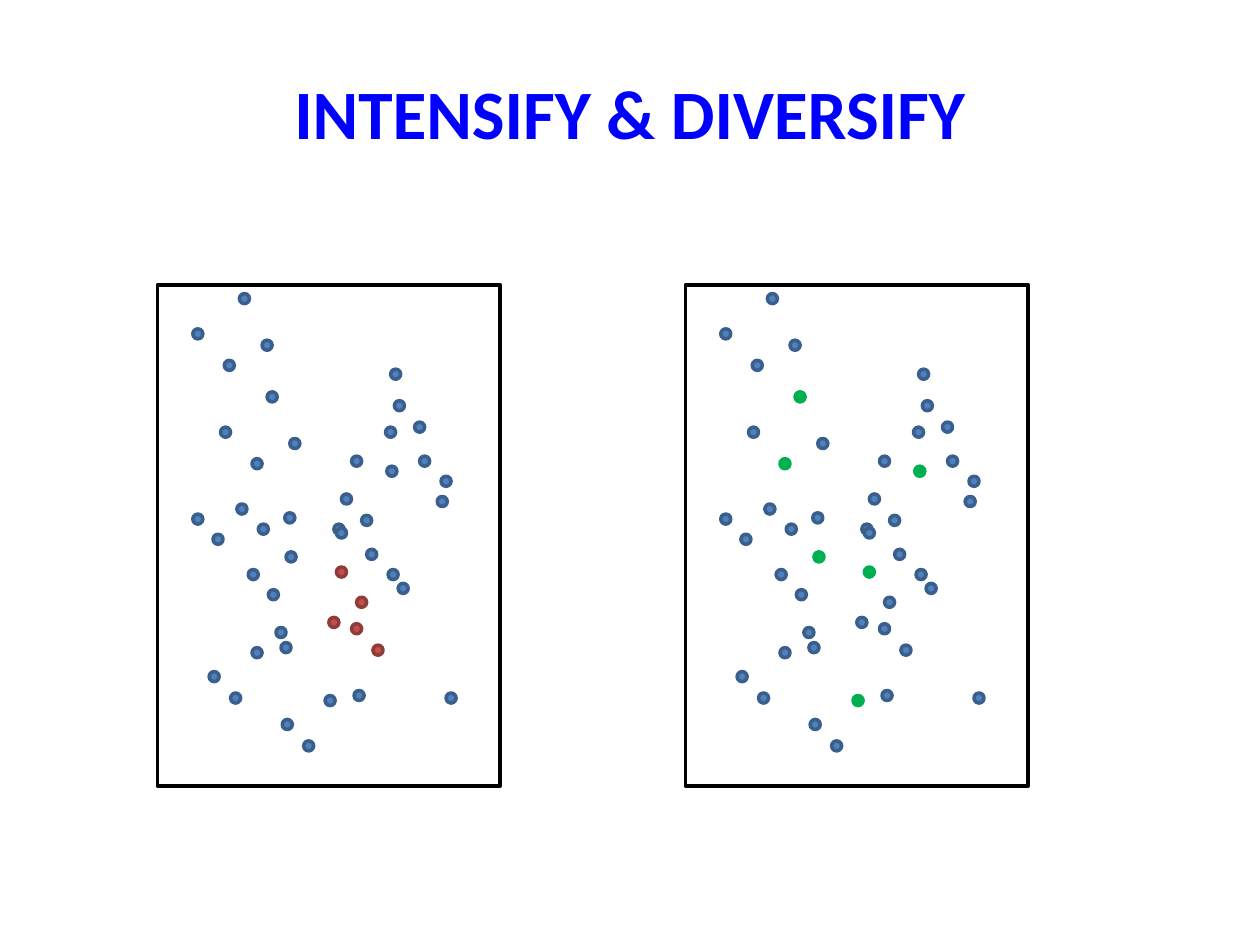
from dataclasses import dataclass

from pptx import Presentation
from pptx.dml.color import RGBColor
from pptx.enum.shapes import MSO_SHAPE
from pptx.enum.text import MSO_ANCHOR, MSO_AUTO_SIZE, PP_ALIGN
from pptx.shapes.group import GroupShape
from pptx.text.text import TextFrame
from pptx.util import Inches, Pt

OVAL, RECT = MSO_SHAPE.OVAL, MSO_SHAPE.RECTANGLE
CENTER, MIDDLE = PP_ALIGN.CENTER, MSO_ANCHOR.MIDDLE
NO_AUTOFIT = MSO_AUTO_SIZE.NONE

Point = tuple[float, float]


@dataclass(frozen=True)
class DotStyle:
    fill: str
    line: str


@dataclass(frozen=True)
class Theme:
    font: str = "Calibri"
    title_size: float = 39.6
    title_color: str = "0000FF"
    frame_color: str = "000000"
    line_width: float = 2
    plain: DotStyle = DotStyle("4F81BD", "3A5F8C")
    intense: DotStyle = DotStyle("C0504D", "8E3B39")
    diverse: DotStyle = DotStyle("00B050", "00B050")


@dataclass(frozen=True)
class Panel:
    left: float
    chosen: frozenset[Point]
    style: DotStyle


THEME = Theme()
PANEL_TOP, PANEL_WIDTH, PANEL_HEIGHT = 2.26, 2.72, 3.98
DOT_SIZE = 0.08

# Top-left corners of the dots, measured from the panel's top-left corner.
DOTS: list[Point] = [
    (0.5, 1.13), (1.05, 1.22), (0.63, 1.74), (0.72, 2.26), (0.28, 1.82),
    (1.46, 1.66), (1.66, 2.1), (1.54, 1.36), (0.94, 2.72), (1.91, 2.37),
    (0.98, 2.84), (1.54, 2.69), (1.01, 1.81), (0.41, 3.07), (0.8, 1.9),
    (0.88, 2.42), (0.44, 1.98), (1.62, 1.83), (1.83, 2.26), (0.75, 2.88),
    (1.36, 2.64), (1.71, 2.86), (0.58, 3.24), (1.88, 0.92), (2.08, 1.36),
    (1.85, 0.67), (2.22, 1.68), (2.04, 1.09), (2.25, 1.52), (1.81, 1.13),
    (0.28, 0.35), (0.83, 0.44), (0.53, 0.6), (0.65, 0.07), (1.56, 3.22),
    (0.99, 3.45), (1.33, 3.26), (2.29, 3.24), (1.16, 3.62), (1.4, 1.9),
    (0.75, 1.38), (0.87, 0.85), (1.02, 2.12), (1.58, 2.48), (1.42, 2.24),
    (1.42, 1.93), (1.82, 1.44),
]
CLUSTERED = frozenset(
    [(1.54, 2.69), (1.36, 2.64), (1.71, 2.86), (1.58, 2.48), (1.42, 2.24)])
SCATTERED = frozenset(
    [(1.33, 3.26), (0.75, 1.38), (0.87, 0.85), (1.02, 2.12), (1.42, 2.24),
     (1.82, 1.44)])
PANELS = [
    Panel(1.25, CLUSTERED, THEME.intense),
    Panel(5.44, SCATTERED, THEME.diverse),
]


def write(tf: TextFrame, text: str, *, size: float, color: str,
          bold: bool = False, align: PP_ALIGN = CENTER) -> None:
    tf.word_wrap = True
    tf.auto_size = NO_AUTOFIT
    tf.vertical_anchor = MIDDLE
    p = tf.paragraphs[0]
    p.alignment = align
    r = p.add_run()
    r.text = text
    r.font.name = THEME.font
    r.font.size = Pt(size)
    r.font.bold = bold
    r.font.color.rgb = RGBColor.from_string(color)


def add_outlined(group: GroupShape, kind: MSO_SHAPE, left: float, top: float,
                 width: float, height: float, line: str,
                 fill: str | None = None) -> None:
    """Add an outlined shape; without a fill colour it stays see-through."""
    sp = group.shapes.add_shape(
        kind, Inches(left), Inches(top), Inches(width), Inches(height))
    sp.shadow.inherit = False
    if fill is None:
        sp.fill.background()
    else:
        sp.fill.solid()
        sp.fill.fore_color.rgb = RGBColor.from_string(fill)
    sp.line.color.rgb = RGBColor.from_string(line)
    sp.line.width = Pt(THEME.line_width)


def draw_panel(group: GroupShape, panel: Panel) -> None:
    add_outlined(group, RECT, panel.left, PANEL_TOP, PANEL_WIDTH, PANEL_HEIGHT,
                 THEME.frame_color)
    for dot in DOTS:
        style = panel.style if dot in panel.chosen else THEME.plain
        add_outlined(group, OVAL, panel.left + dot[0], PANEL_TOP + dot[1],
                     DOT_SIZE, DOT_SIZE, style.line, style.fill)


def main() -> None:
    prs = Presentation()
    prs.slide_width, prs.slide_height = Inches(10), Inches(7.5)
    s = prs.slides.add_slide(prs.slide_layouts[5])

    title = s.shapes.title
    title.left, title.top = Inches(0.5), Inches(0.5)
    title.width, title.height = Inches(9), Inches(0.78)
    write(title.text_frame, "INTENSIFY & DIVERSIFY", size=THEME.title_size,
          color=THEME.title_color, bold=True)

    for panel in PANELS:
        draw_panel(s.shapes.add_group_shape(), panel)

    prs.save("out.pptx")


if __name__ == "__main__":
    main()
